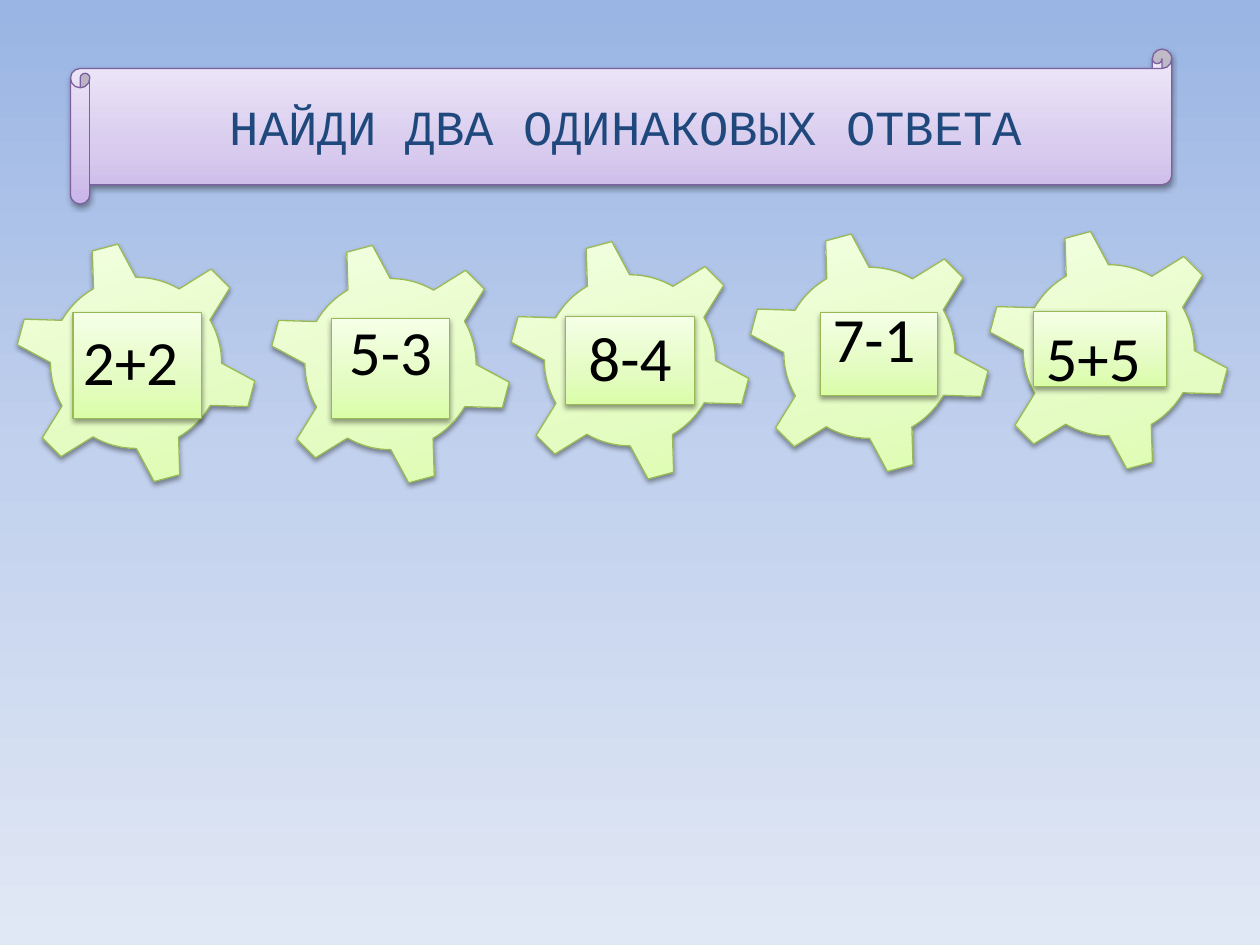
from typing import NamedTuple

from lxml import etree
from pptx import Presentation
from pptx.dml.color import RGBColor
from pptx.enum import shapes, text
from pptx.oxml import ns
from pptx.util import Inches, Pt

COLORS = {
    "title": "1F497D", "answer": "000000", "shadow": "000000",
    "gear_line": "98B955", "scroll_line": "7D60A0",
}
SKY = ((0, "9AB5E4"), (50, "C2D1ED"), (100, "E1E8F5"))
LIME = ((0, "DAFDA7"), (35, "E4FCC2"), (100, "F5FFE7"))
LILAC = ((0, "C9B5E8"), (35, "D8CBEE"), (100, "F0EAF9"))
GEAR_SIZE = 1.94
LABEL_HEIGHT = 0.71


class Box(NamedTuple):
    left: float
    top: float
    width: float
    height: float

    def emu(self):
        return tuple(Inches(length) for length in self)


class Gear(NamedTuple):
    sum_text: str
    left: float
    top: float
    plate: Box
    label: Box
    indent: float = 0.1


GEARS = [
    Gear("2+2", 0.11, 1.91, Box(0.58, 2.48, 1.02, 0.84), Box(0.56, 2.51, 1.03, LABEL_HEIGHT)),
    Gear("5-3", 2.13, 1.92, Box(2.63, 2.53, 0.94, 0.79), Box(2.56, 2.43, 1.09, LABEL_HEIGHT), 0.21),
    Gear("8-4", 4.03, 1.89, Box(4.49, 2.51, 1.02, 0.70), Box(4.46, 2.48, 1.05, LABEL_HEIGHT), 0.21),
    Gear("7-1", 5.93, 1.83, Box(6.51, 2.48, 0.93, 0.66), Box(6.51, 2.33, 1.04, LABEL_HEIGHT)),
    Gear("5+5", 7.83, 1.81, Box(8.20, 2.47, 1.06, 0.60), Box(8.20, 2.48, 1.21, LABEL_HEIGHT)),
]


def add_child(parent, tag: str, **attributes):
    return etree.SubElement(parent, ns.qn(tag), **{k: str(v) for k, v in attributes.items()})


def paint_gradient(fill, owner, stops, angle: int) -> None:
    """Fill with any number of colour stops; angle runs counter-clockwise."""
    fill.gradient()
    fill.gradient_angle = angle
    stop_list = next(owner.iter(ns.qn("a:gsLst")))
    for old_stop in list(stop_list):
        stop_list.remove(old_stop)
    for percent, color in stops:
        stop = add_child(stop_list, "a:gs", pos=percent * 1000)
        add_child(stop, "a:srgbClr", val=color)


def add_glossy(parent, kind, box: Box, stops, line: str):
    """Add a preset shape with a gradient, a thin outline and a soft shadow."""
    shape = parent.shapes.add_shape(kind, *box.emu())
    paint_gradient(shape.fill, shape.element, stops, 90)
    shape.line.color.rgb = RGBColor.from_string(line)
    shape.line.width = Pt(0.75)
    shape.shadow.inherit = False
    effects = shape.element.spPr.find(ns.qn("a:effectLst"))
    shadow = add_child(effects, "a:outerShdw", blurRad=Pt(3.1), dist=Pt(1.6),
                       dir=90 * 60000, rotWithShape=0)
    shade = add_child(shadow, "a:srgbClr", val=COLORS["shadow"])
    add_child(shade, "a:alpha", val=38000)
    return shape


def write(paragraph, words: str, font: str, size: int, color: str) -> None:
    run = paragraph.add_run()
    run.text = words
    run.font.name = font
    run.font.size = Pt(size)
    run.font.color.rgb = RGBColor.from_string(color)


def add_gear(slide, gear: Gear) -> None:
    group = slide.shapes.add_group_shape()
    wheel = add_glossy(group, shapes.MSO_SHAPE.GEAR_6,
                       Box(gear.left, gear.top, GEAR_SIZE, GEAR_SIZE), LIME, COLORS["gear_line"])
    wheel.rotation = 345
    add_glossy(group, shapes.MSO_SHAPE.RECTANGLE, gear.plate, LIME, COLORS["gear_line"])

    frame = slide.shapes.add_textbox(*gear.label.emu()).text_frame
    frame.word_wrap = True
    frame.auto_size = text.MSO_AUTO_SIZE.SHAPE_TO_FIT_TEXT
    frame.margin_left = Inches(gear.indent)
    write(frame.paragraphs[0], gear.sum_text, "Calibri", 36, COLORS["answer"])


def add_heading(slide, words: str) -> None:
    add_glossy(slide, shapes.MSO_SHAPE.HORIZONTAL_SCROLL, Box(0.56, 0.39, 8.74, 1.23),
               LILAC, COLORS["scroll_line"])
    title = slide.shapes.title
    title.left, title.top, title.width, title.height = Box(0.71, 0.54, 8.52, 0.92).emu()
    # The title comes first on the slide, so bring it in front of the scroll
    slide.shapes.element.append(title.element)
    frame = title.text_frame
    frame.word_wrap = True
    frame.auto_size = text.MSO_AUTO_SIZE.NONE
    frame.vertical_anchor = text.MSO_ANCHOR.MIDDLE
    frame.paragraphs[0].alignment = text.PP_ALIGN.CENTER
    write(frame.paragraphs[0], words, "Courier New", 28, COLORS["title"])


def main() -> None:
    deck = Presentation()
    deck.slide_width, deck.slide_height = Inches(10), Inches(7.5)
    slide = deck.slides.add_slide(deck.slide_layouts[5])

    # Sky background
    paint_gradient(slide.background.fill, slide.element, SKY, 270)

    # Gears with sums
    for gear in GEARS:
        add_gear(slide, gear)

    # Heading on a scroll
    add_heading(slide, "НАЙДИ ДВА ОДИНАКОВЫХ ОТВЕТА")

    deck.save("out.pptx")


if __name__ == "__main__":
    main()
